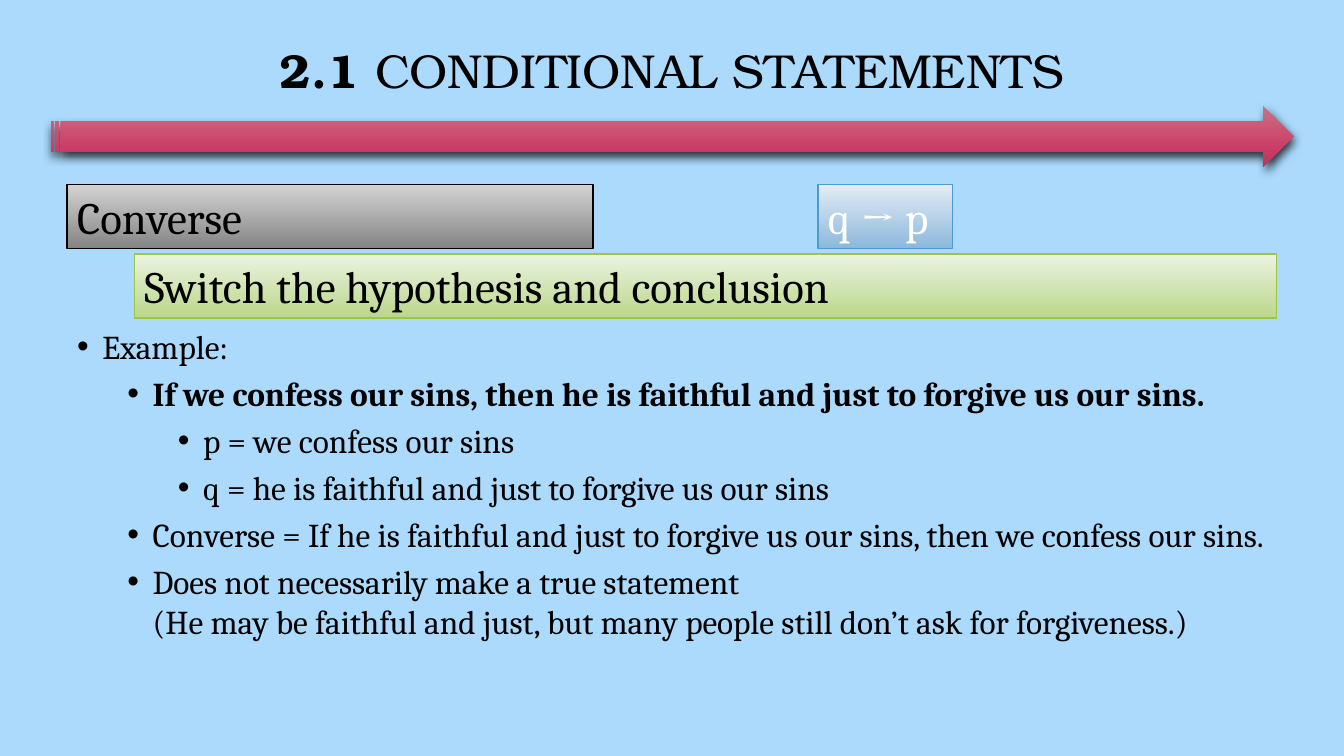
from dataclasses import dataclass

from lxml.etree import SubElement
from pptx import Presentation
from pptx.dml.color import RGBColor
from pptx.enum.shapes import MSO_SHAPE
from pptx.enum.text import MSO_ANCHOR, MSO_AUTO_SIZE, PP_ALIGN
from pptx.oxml.ns import qn
from pptx.shapes.autoshape import Shape
from pptx.slide import Slide
from pptx.text.text import Font
from pptx.util import Emu, Pt

BLACK = "000000"
SERIF = "Cambria"
STEP = 48  # indent per outline level
HANG = 24


@dataclass
class Area:
    left: int
    top: int
    width: int
    height: int

    def emu(self) -> list[Emu]:
        return [px(n) for n in (self.left, self.top, self.width, self.height)]


@dataclass
class Box:
    text: str
    area: Area
    stops: dict[int, str]
    edge: str
    ink: str = BLACK
    wrap: bool = True


@dataclass
class Item:
    level: int
    text: str
    bold: bool = False


BOXES = [
    Box("q → p", Area(779, 176, 128, 61), {0: "E3ECF5", 100: "8CB8DC"},
        "4A9CCC", "FFFFFF", False),
    Box("Converse", Area(64, 176, 501, 61), {0: "D3D3D3", 100: "848484"}, BLACK),
    Box("Switch the hypothesis and conclusion", Area(128, 242, 1088, 61),
        {0: "EBF3E1", 100: "BAD78A"}, "9EC544"),
]

ITEMS = [
    Item(0, "Example:"),
    Item(1, "If we confess our sins, then he is faithful and just to forgive us our sins.", True),
    Item(2, "p = we confess our sins"),
    Item(2, "q = he is faithful and just to forgive us our sins"),
    Item(1, "Converse = If he is faithful and just to forgive us our sins, "
            "then we confess our sins."),
    Item(1, "Does not necessarily make a true statement \v"
            "(He may be faithful and just, but many people still don’t ask for forgiveness.)"),
]


def px(count: int) -> Emu:
    return Emu(count * 9525)


def color(code: str) -> RGBColor:
    return RGBColor.from_string(code)


def style(font: Font, size: float, name: str, ink: str, bold: bool = False) -> None:
    font.size, font.name, font.bold = Pt(size), name, bold
    font.color.rgb = color(ink)


def shade(shape: Shape, stops: dict[int, str]) -> None:
    """Fill from top to bottom, with stops given in percent."""
    shape.shadow.inherit = False
    shape.fill.gradient()
    shape.fill.gradient_angle = 270
    ramp = shape._element.spPr.find(qn("a:gradFill")).find(qn("a:gsLst"))
    for old in list(ramp):
        ramp.remove(old)
    for place, code in stops.items():
        stop = SubElement(ramp, qn("a:gs"), pos=str(place * 1000))
        SubElement(stop, qn("a:srgbClr"), val=code)


def add_arrow(slide: Slide) -> None:
    area = Area(49, 101, 1183, 58)
    arrow = slide.shapes.add_shape(MSO_SHAPE.STRIPED_RIGHT_ARROW, *area.emu())
    shade(arrow, {0: "CC7087", 69: "CA3D66", 100: "BA355B"})
    arrow.line.fill.background()
    effects = arrow._element.spPr.find(qn("a:effectLst"))
    cast = SubElement(effects, qn("a:outerShdw"), blurRad=str(Pt(6)),
                      dist=str(Pt(3)), dir="5400000", rotWithShape="0")
    tint = SubElement(cast, qn("a:srgbClr"), val=BLACK)
    SubElement(tint, qn("a:alpha"), val="76000")
    slide.shapes._spTree.insert(2, arrow._element)  # behind the title


def set_title(slide: Slide) -> None:
    title = slide.shapes.title
    title.left, title.top, title.width, title.height = Area(0, 0, 1280, 139).emu()
    frame = title.text_frame
    frame.auto_size = MSO_AUTO_SIZE.NONE
    frame.vertical_anchor = MSO_ANCHOR.MIDDLE
    para = frame.paragraphs[0]
    para.alignment, para.line_spacing = PP_ALIGN.CENTER, 0.9
    for text, bold in (("2.1 ", True), ("CONDITIONAL STATEMENTS", False)):
        run = para.add_run()
        run.text = text
        style(run.font, 34, "TeX Gyre Bonum", BLACK, bold)


def add_list(slide: Slide, items: list[Item]) -> None:
    frame = slide.shapes.add_textbox(*Area(64, 306, 1152, 366).emu()).text_frame
    frame.word_wrap = True
    for i, item in enumerate(items):
        para = frame.add_paragraph() if i else frame.paragraphs[0]
        para.text = item.text
        para.level = item.level
        para.space_before = Pt(5 if item.level else 10)
        props = para._p.get_or_add_pPr()
        props.set("marL", str(px(HANG + STEP * item.level)))
        props.set("indent", str(px(-HANG)))
        SubElement(props, qn("a:buFont"), typeface="Arial")
        SubElement(props, qn("a:buChar"), char="•")
        for run in para.runs:
            style(run.font, 23.8, SERIF, BLACK, item.bold)


def add_box(slide: Slide, box: Box) -> None:
    shape = slide.shapes.add_shape(MSO_SHAPE.RECTANGLE, *box.area.emu())
    shade(shape, box.stops)
    shape.line.color.rgb = color(box.edge)
    shape.line.width = Pt(1)
    frame = shape.text_frame
    frame.text = box.text
    frame.word_wrap = box.wrap
    frame.auto_size = MSO_AUTO_SIZE.SHAPE_TO_FIT_TEXT
    frame.vertical_anchor = MSO_ANCHOR.TOP
    para = frame.paragraphs[0]
    para.alignment = PP_ALIGN.LEFT
    style(para.runs[0].font, 32, SERIF, box.ink)


def main() -> None:
    deck = Presentation()
    deck.slide_width, deck.slide_height = px(1280), px(720)
    slide = deck.slides.add_slide(deck.slide_layouts.get_by_name("Title Only"))
    slide.background.fill.solid()
    slide.background.fill.fore_color.rgb = color("ABDAFC")
    add_arrow(slide)
    set_title(slide)
    add_list(slide, ITEMS)
    for box in BOXES:
        add_box(slide, box)
    deck.save("out.pptx")


if __name__ == "__main__":
    main()
